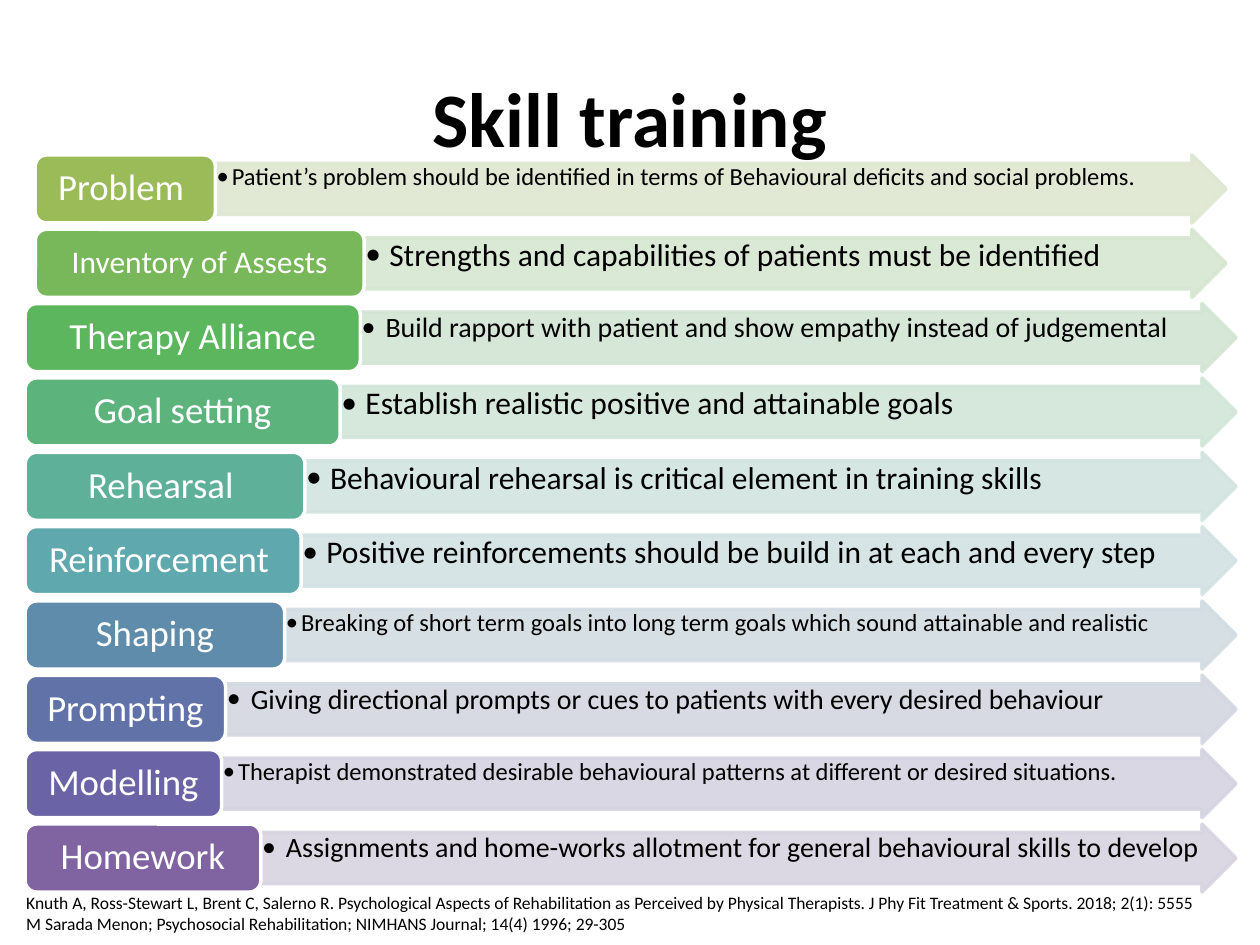
from dataclasses import dataclass

from lxml import etree
from pptx import Presentation
from pptx import util as u
from pptx.dml.color import RGBColor
from pptx.enum import shapes, text
from pptx.oxml.ns import qn

PX = u.Inches(1) // 100  # one px is a hundredth of an inch
FIRST_TOP, PITCH, HEIGHT = 123, 59, 54
SLIDE_SPAN = 1001  # left margin of a row plus its right end
OPACITY = "90000"

COLORS = {
    "black": "000000",
    "white": "FFFFFF",
    "problem": "9BBB59", "problem arrow": "DEE7D1",
    "inventory": "79B85A", "inventory arrow": "D7E6D2",
    "alliance": "5BB65D", "alliance arrow": "D2E5D3",
    "goal": "5CB37C", "goal arrow": "D2E5D9",
    "rehearsal": "5EB099", "rehearsal arrow": "D2E4DF",
    "reinforcement": "5FA8AD", "reinforcement arrow": "D2E2E3",
    "shaping": "608CAB", "shaping arrow": "D2DCE2",
    "prompting": "6172A8", "prompting arrow": "D3D7E1",
    "modelling": "6A63A5", "modelling arrow": "D4D3E1",
    "homework": "8064A2", "homework arrow": "D8D3E0",
}


@dataclass
class Step:
    color: str
    label: str
    width: int
    detail: str
    detail_size: int
    label_size: int = 21
    left: int = 20


STEPS = [
    Step("problem", "Problem ", 143,
         "Patient’s problem should be identified in terms of Behavioural deficits and social problems.",
         14, left=28),
    Step("inventory", "Inventory of Assests", 261,
         "Strengths and capabilities of patients must be identified", 18, label_size=18, left=28),
    Step("alliance", "Therapy Alliance", 266,
         "Build rapport with patient and show empathy instead of judgemental", 16),
    Step("goal", "Goal setting", 250, "Establish realistic positive and attainable goals", 18),
    Step("rehearsal", "Rehearsal ", 222,
         "Behavioural rehearsal is critical element in training skills", 18),
    Step("reinforcement", "Reinforcement ", 219,
         "Positive reinforcements should be build in at each and every step", 18),
    Step("shaping", "Shaping", 206,
         "Breaking of short term goals into long term goals which sound attainable and realistic", 14),
    Step("prompting", "Prompting", 159,
         "Giving directional prompts or cues to patients with every desired behaviour", 16),
    Step("modelling", "Modelling", 156,
         "Therapist demonstrated desirable behavioural patterns at different or desired situations.", 14),
    Step("homework", "Homework", 187,
         "Assignments and home-works allotment for general behavioural skills to develop", 16),
]

REFERENCES = [
    "Knuth A, Ross-Stewart L, Brent C, Salerno R. Psychological Aspects of Rehabilitation as "
    "Perceived by Physical Therapists. J Phy Fit Treatment & Sports. 2018; 2(1): 5555",
    "M Sarada Menon; Psychosocial Rehabilitation; NIMHANS Journal; 14(4) 1996; 29-305",
]


def rgb(name: str) -> RGBColor:
    return RGBColor.from_string(COLORS[name])


def box(left: int, top: int, width: int, height: int) -> list[int]:
    return [value * PX for value in (left, top, width, height)]


def set_all(target, values: dict) -> None:
    for name, value in values.items():
        setattr(target, name, value)


def write(paragraph, words: str, size: int, color: str, bold: bool = False) -> None:
    run = paragraph.add_run()
    run.text = words
    set_all(run.font, {"name": "Calibri", "size": u.Pt(size), "bold": bold})
    run.font.color.rgb = rgb(color)


def add_block(slide, preset, area: list[int], fill: str, line: str, frame_format: dict):
    block = slide.shapes.add_shape(preset, *area)
    block.shadow.inherit = False
    block.fill.solid()
    block.fill.fore_color.rgb = rgb(fill)
    block.line.color.rgb = rgb(line)
    block.line.width = u.Pt(2)
    set_all(block.text_frame, {"word_wrap": True, **frame_format})
    block.text_frame.paragraphs[0].line_spacing = 0.9
    return block


def add_arrow(slide, step: Step, top: int) -> None:
    left = step.left + step.width
    tint = step.color + " arrow"
    margins = dict.fromkeys(("margin_left", "margin_top", "margin_right", "margin_bottom"), PX)
    arrow = add_block(slide, shapes.MSO_SHAPE.RIGHT_ARROW,
                      box(left, top, SLIDE_SPAN - step.left - left, HEIGHT), tint, tint,
                      {"vertical_anchor": text.MSO_ANCHOR.TOP, **margins})
    arrow.adjustments[0] = 0.75
    arrow.adjustments[1] = 0.5
    for color in arrow._element.spPr.iter(qn("a:srgbClr")):
        etree.SubElement(color, qn("a:alpha"), val=OPACITY)

    # Bulleted detail with a hanging indent
    paragraph = arrow.text_frame.paragraphs[0]
    indent = (12 if step.detail_size == 14 else 19) * PX
    properties = paragraph._p.get_or_add_pPr()
    properties.set("marL", str(indent))
    properties.set("indent", str(-indent))
    etree.SubElement(properties, qn("a:buFont"), typeface="Calibri")
    etree.SubElement(properties, qn("a:buChar"), char="•")
    set_all(paragraph, {"level": 1, "alignment": text.PP_ALIGN.LEFT})
    write(paragraph, step.detail, step.detail_size, "black")


def add_label(slide, step: Step, top: int) -> None:
    side = (9 if step.label_size == 21 else 7) * PX
    label = add_block(slide, shapes.MSO_SHAPE.ROUNDED_RECTANGLE,
                      box(step.left, top, step.width, HEIGHT), step.color, "white",
                      {"vertical_anchor": text.MSO_ANCHOR.MIDDLE,
                       "margin_left": side, "margin_right": side,
                       "margin_top": 4 * PX, "margin_bottom": 4 * PX})
    paragraph = label.text_frame.paragraphs[0]
    paragraph.alignment = text.PP_ALIGN.CENTER
    write(paragraph, step.label, step.label_size, "white")


def main() -> None:
    deck = Presentation()
    set_all(deck, {"slide_width": 1000 * PX, "slide_height": 750 * PX})
    slide = deck.slides.add_slide(deck.slide_layouts[5])

    # Title
    title = slide.shapes.title
    set_all(title, dict(zip(("left", "top", "width", "height"), box(50, 30, 900, 125))))
    title.text_frame.vertical_anchor = text.MSO_ANCHOR.MIDDLE
    heading = title.text_frame.paragraphs[0]
    heading.alignment = text.PP_ALIGN.CENTER
    write(heading, "Skill training", 44, "black", bold=True)

    # Training steps
    for row, step in enumerate(STEPS):
        top = FIRST_TOP + row * PITCH
        add_arrow(slide, step, top)
        add_label(slide, step, top)

    # References
    references = slide.shapes.add_textbox(*box(11, 703, 988, 44)).text_frame
    references.word_wrap = True
    for index, citation in enumerate(REFERENCES):
        paragraph = references.add_paragraph() if index else references.paragraphs[0]
        write(paragraph, citation, 10, "black")

    deck.save("out.pptx")


if __name__ == "__main__":
    main()
